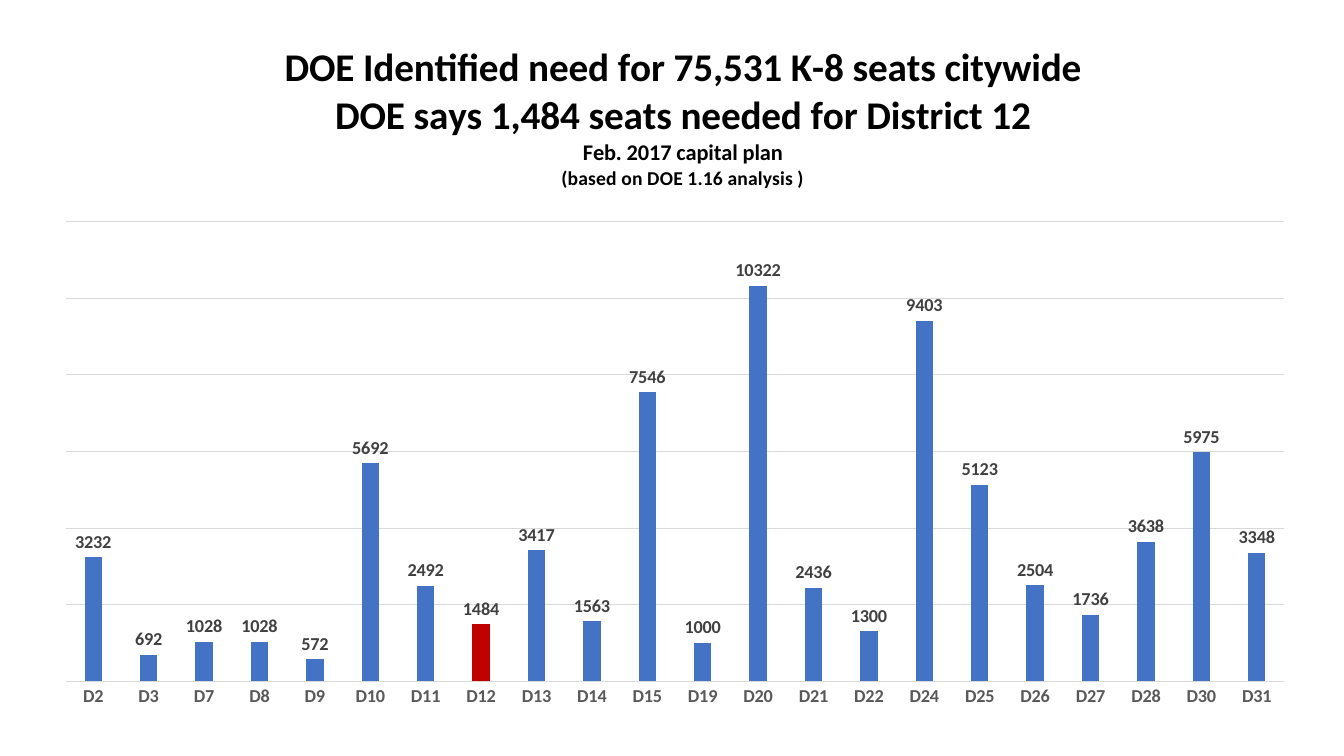
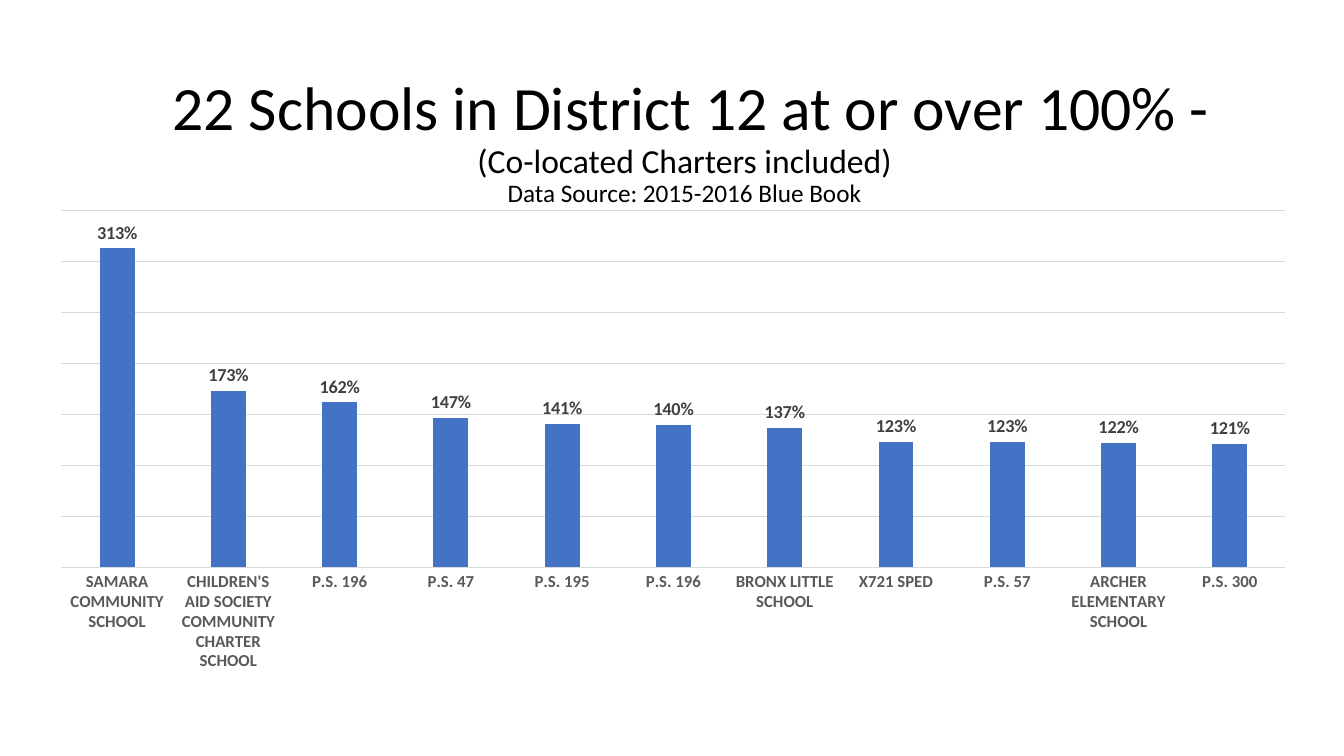
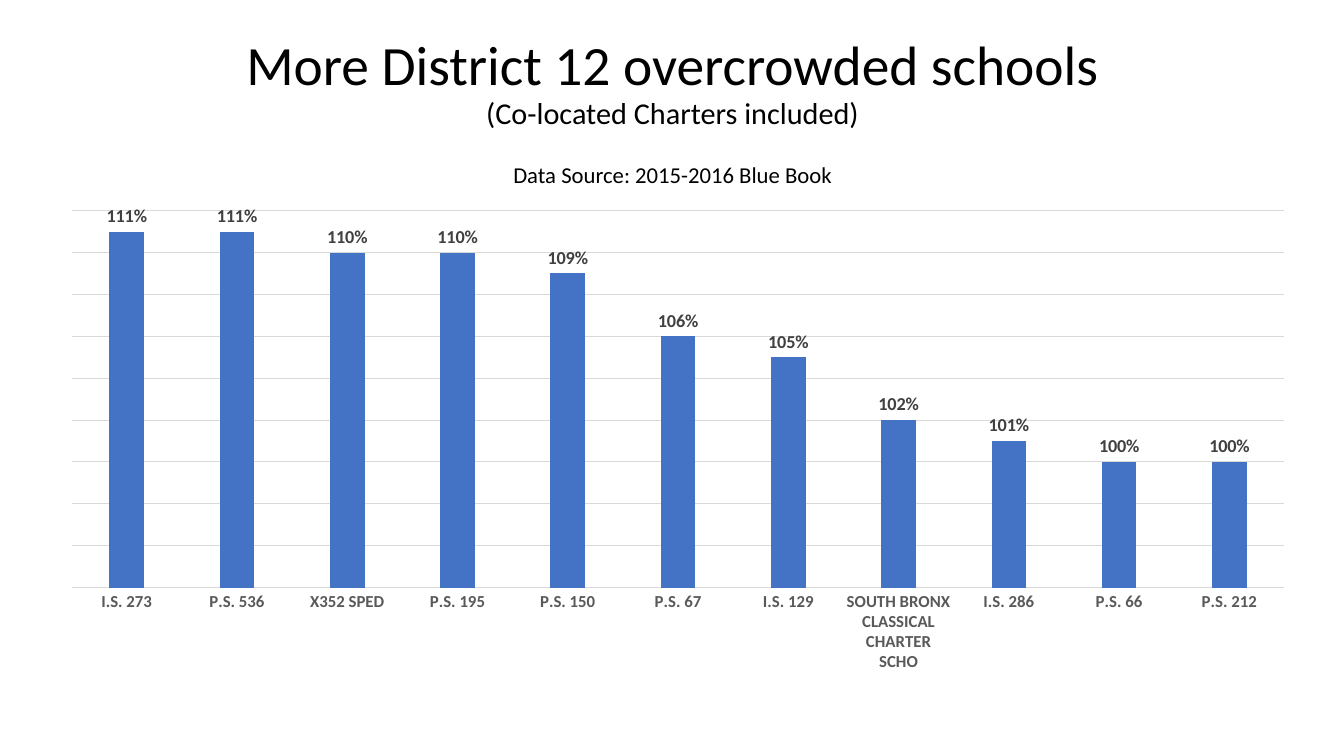
import pptx
import pptx.chart.data
import pptx.dml.color
import pptx.enum.chart
import pptx.enum.text
import pptx.oxml
import pptx.oxml.ns
import pptx.util
from pptx.util import Inches

FONT = "Calibri"
BLACK = "000000"
BAR_BLUE = "4472C4"
HIGHLIGHT_RED = "C00000"
GRID_GRAY = "D9D9D9"
AXIS_GRAY = "595959"
LABEL_GRAY = "404040"


def rgb(hex_color):
    return pptx.dml.color.RGBColor.from_string(hex_color)


def style_font(font, size, color=BLACK, bold=False):
    font.name = FONT
    font.size = pptx.util.Pt(size)
    font.color.rgb = rgb(color)
    font.bold = bold


def write(paragraph, text, size, color=BLACK, bold=False, space_before=0, line_spacing=None):
    run = paragraph.add_run()
    run.text = text
    style_font(run.font, size, color, bold)
    paragraph.alignment = pptx.enum.text.PP_ALIGN.CENTER
    paragraph.space_before = pptx.util.Pt(space_before)
    if line_spacing:
        paragraph.line_spacing = line_spacing


def write_lines(text_frame, lines, **shared_format):
    """Write one paragraph for each (text, format) pair."""
    for index, (text, line_format) in enumerate(lines):
        paragraph = text_frame.paragraphs[0] if index == 0 else text_frame.add_paragraph()
        write(paragraph, text, **shared_format, **line_format)


def style_line(line, color=GRID_GRAY, width=0.75):
    line.color.rgb = rgb(color)
    line.width = pptx.util.Pt(width)


def set_layout(parent, position, **fractions):
    """Place a chart part at fractions (x, y, w, h) of the chart area."""
    for layout in parent.xpath("c:layout"):
        parent.remove(layout)
    modes = [("layoutTarget", "inner")] if "w" in fractions else []
    modes += [("xMode", "edge"), ("yMode", "edge")]
    settings = "".join(f'<c:{name} val="{value}"/>' for name, value in modes + list(fractions.items()))
    namespace = pptx.oxml.ns.nsdecls("c")
    parent.insert(position, pptx.oxml.parse_xml(
        f"<c:layout {namespace}><c:manualLayout>{settings}</c:manualLayout></c:layout>"))


class Deck:
    """Holds the presentation, its style and the current slide."""

    def __init__(self):
        self.presentation = pptx.Presentation()
        self.presentation.slide_width = Inches(13.33)
        self.presentation.slide_height = Inches(7.5)
        self.slide = None

    def add_slide(self, layout_name):
        layout = self.presentation.slide_layouts.get_by_name(layout_name)
        self.slide = self.presentation.slides.add_slide(layout)

    def add_title(self, left, top, lines):
        title = self.slide.shapes.title
        title.left, title.top = Inches(left), Inches(top)
        title.width, title.height = Inches(11.5), Inches(1.45)
        text_frame = title.text_frame
        text_frame.word_wrap = True
        text_frame.auto_size = pptx.enum.text.MSO_AUTO_SIZE.NONE
        text_frame.vertical_anchor = pptx.enum.text.MSO_ANCHOR.MIDDLE
        write_lines(text_frame, lines, line_spacing=0.9)

    def add_column_chart(self, box, plot_box, series_name, values, scale,
                         number_format="General", axis_size=12):
        """Draw (category, value) pairs; plot_box is in slide inches, scale is (low, high, step)."""
        chart_data = pptx.chart.data.CategoryChartData(number_format=number_format)
        chart_data.categories = [category for category, _ in values]
        chart_data.add_series(series_name, [value for _, value in values])
        chart = self.slide.shapes.add_chart(
            pptx.enum.chart.XL_CHART_TYPE.COLUMN_CLUSTERED,
            *[Inches(length) for length in box], chart_data).chart
        chart.has_title = False
        chart.has_legend = False
        style_font(chart.font, 10)

        left, top, width, height = box
        plot_left, plot_top, plot_width, plot_height = plot_box
        set_layout(chart.element.xpath("c:chart/c:plotArea")[0], 0,
                   x=(plot_left - left) / width, y=(plot_top - top) / height,
                   w=plot_width / width, h=plot_height / height)

        category_axis = chart.category_axis
        category_axis.major_tick_mark = pptx.enum.chart.XL_TICK_MARK.NONE
        style_font(category_axis.tick_labels.font, axis_size, AXIS_GRAY, bold=True)
        style_line(category_axis.format.line)

        value_axis = chart.value_axis
        value_axis.minimum_scale, value_axis.maximum_scale, value_axis.major_unit = scale
        value_axis.has_major_gridlines = True
        style_line(value_axis.major_gridlines.format.line)
        value_axis.visible = False

        plot = chart.plots[0]
        plot.gap_width = 219
        plot.overlap = -27
        plot.vary_by_categories = False
        fill = plot.series[0].format.fill
        fill.solid()
        fill.fore_color.rgb = rgb(BAR_BLUE)

        plot.has_data_labels = True
        labels = plot.data_labels
        labels.show_value = True
        labels.position = pptx.enum.chart.XL_LABEL_POSITION.OUTSIDE_END
        labels.number_format = number_format
        labels.number_format_is_linked = False
        style_font(labels.font, 13, LABEL_GRAY, bold=True)
        return chart

    def add_chart_title(self, chart, lines, x, y):
        chart.has_title = True
        write_lines(chart.chart_title.text_frame, lines, bold=True)
        set_layout(chart.chart_title.element, 1, x=x, y=y)

    def highlight_column(self, chart, category):
        plot = chart.plots[0]
        fill = plot.series[0].points[list(plot.categories).index(category)].format.fill
        fill.solid()
        fill.fore_color.rgb = rgb(HIGHLIGHT_RED)


SEATS_NEEDED = [
    ("D2", 3232), ("D3", 692), ("D7", 1028), ("D8", 1028), ("D9", 572), ("D10", 5692),
    ("D11", 2492), ("D12", 1484), ("D13", 3417), ("D14", 1563), ("D15", 7546),
    ("D19", 1000), ("D20", 10322), ("D21", 2436), ("D22", 1300), ("D24", 9403),
    ("D25", 5123), ("D26", 2504), ("D27", 1736), ("D28", 3638), ("D30", 5975), ("D31", 3348),
]
MOST_CROWDED = [
    ("SAMARA COMMUNITY SCHOOL", 3.13),
    ("CHILDREN'S AID SOCIETY COMMUNITY CHARTER SCHOOL", 1.73),
    ("P.S. 196", 1.62), ("P.S. 47", 1.47), ("P.S. 195", 1.41), ("P.S. 196", 1.4),
    ("BRONX LITTLE SCHOOL", 1.37), ("X721 SPED", 1.23), ("P.S. 57", 1.23),
    ("ARCHER ELEMENTARY SCHOOL", 1.22), ("P.S. 300", 1.21),
]
ALSO_CROWDED = [
    ("I.S. 273", 1.11), ("P.S. 536", 1.11), ("X352 SPED", 1.1), ("P.S. 195", 1.1),
    ("P.S. 150", 1.09), ("P.S. 67", 1.06), ("I.S. 129", 1.05),
    ("SOUTH BRONX CLASSICAL CHARTER SCHO", 1.02),
    ("I.S. 286", 1.01), ("P.S. 66", 1), ("P.S. 212", 1),
]


def main():
    deck = Deck()

    deck.add_slide("Blank")
    seats_chart = deck.add_column_chart(
        (0.4, 0.33, 12.59, 6.83), (0.65, 2.2, 12.09, 4.56),
        "Seats needed", SEATS_NEEDED, (0, 12000, 2000), axis_size=13)
    deck.add_chart_title(seats_chart, [
        ("DOE Identified need for 75,531 K-8 seats citywide", {"size": 28}),
        ("DOE says 1,484 seats needed for District 12", {"size": 28}),
        ("Feb. 2017 capital plan", {"size": 16}),
        ("(based on DOE 1.16 analysis )", {"size": 14}),
    ], x=0.19, y=0.01)
    deck.highlight_column(seats_chart, "D12")

    deck.add_slide("Title Only")
    deck.add_title(1.04, 0.69, [
        (" 22 Schools in District 12 at or over 100% -", {"size": 44}),
        ("(Co-located Charters included)", {"size": 24}),
        ("Data Source: 2015-2016 Blue Book", {"size": 18}),
    ])
    deck.add_column_chart(
        (0.36, 2, 12.64, 4.76), (0.61, 2.09, 12.14, 3.54),
        "Utilization", MOST_CROWDED, (0, 3.5, 0.5), number_format="0%")

    deck.add_slide("Title Only")
    deck.add_title(0.92, 0.4, [
        ("More District 12 overcrowded schools", {"size": 39.6}),
        ("(Co-located Charters included)", {"size": 21.6}),
        ("Data Source: 2015-2016 Blue Book", {"size": 16.2, "space_before": 24}),
    ])
    deck.add_column_chart(
        (0.47, 2, 12.52, 4.76), (0.71, 2.09, 12.03, 3.74),
        "Utilization", ALSO_CROWDED, (0.94, 1.12, 0.02), number_format="0%")

    deck.presentation.save("out.pptx")


if __name__ == "__main__":
    main()
